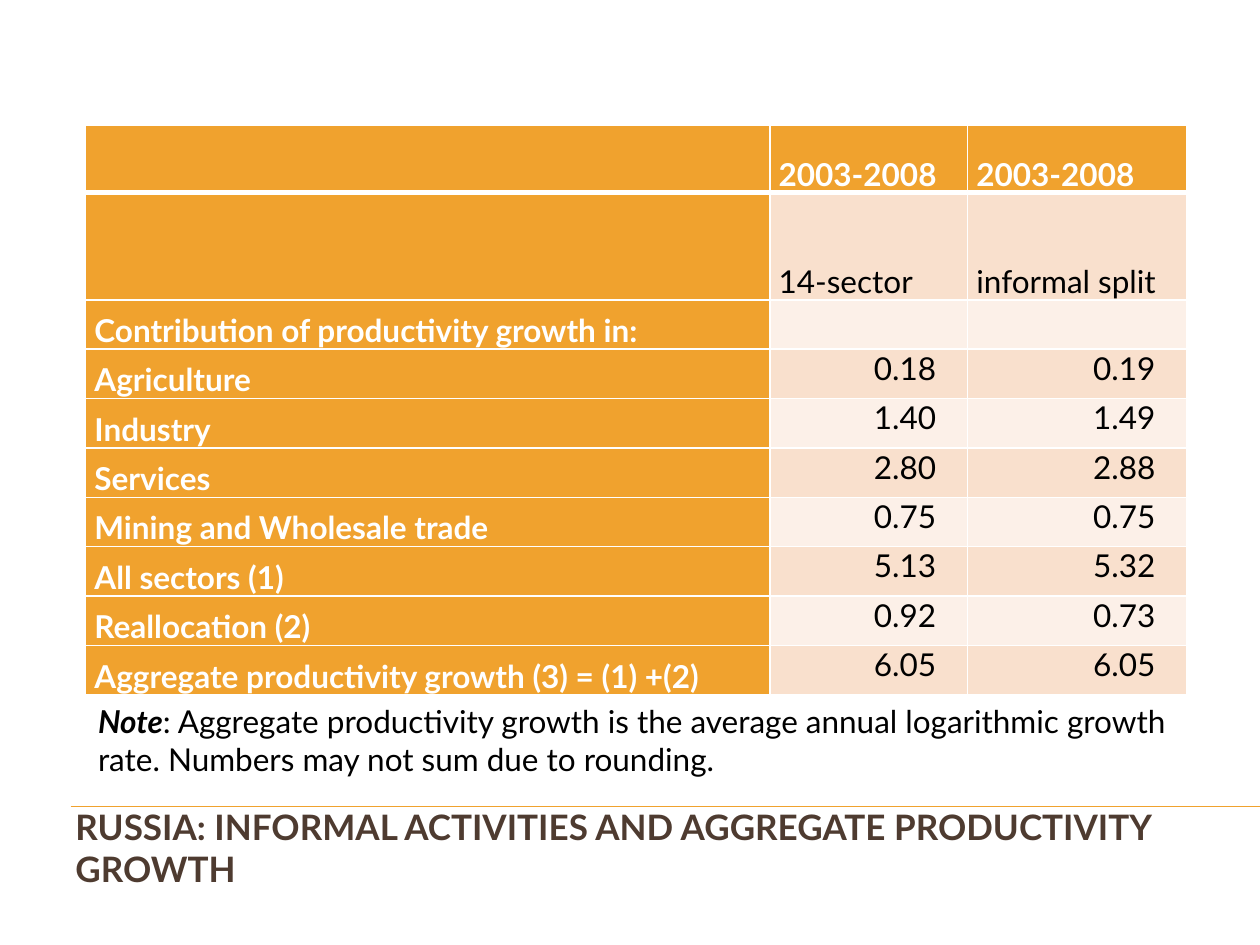
from dataclasses import dataclass

from lxml.etree import SubElement
from pptx import Presentation
from pptx.dml.color import RGBColor as RGB
from pptx.enum.shapes import MSO_CONNECTOR as Connector
from pptx.enum.text import MSO_ANCHOR as Anchor, PP_ALIGN as Align
from pptx.oxml.ns import qn
from pptx.util import Inches, Pt


@dataclass(frozen=True)
class Theme:
    font: str = "Lato"
    accent: str = "F0A22E"
    bands: tuple = ("F9E0CD", "FCF0E8")
    border: str = "FFFFFF"
    ink: str = "000000"
    heading: str = "4E3B30"
    body_size: int = 18
    title_size: int = 20
    thin: float = 1
    thick: float = 3
    rule: float = 0.75


THEME = Theme()
SLIDE_WIDTH, SLIDE_HEIGHT = Inches(10), Inches(7.5)
GRID_COLUMNS = 100
UNIT = SLIDE_WIDTH / GRID_COLUMNS

LEFT, WIDTH = 6.8, 87.4
COLUMN_WIDTHS = (54.3, 15.7, 17.4)
ROW_HEIGHTS = (5.4, 8.5) + (3.92,) * 8
SIDE_INSET, NUMBER_INSET = 0.7, 2.5

HEADING = "RUSSIA: INFORMAL ACTIVITIES AND AGGREGATE PRODUCTIVITY GROWTH"
NOTE = (": Aggregate productivity growth is the average annual logarithmic "
        "growth rate. Numbers may not sum due to rounding.")
GROWTH_ROWS = (
    ("", "2003-2008", "2003-2008"),
    ("", "14-sector", "informal split"),
    ("Contribution of productivity growth in:", "", ""),
    ("Agriculture", 0.18, 0.19),
    ("Industry", 1.40, 1.49),
    ("Services", 2.80, 2.88),
    ("Mining and Wholesale trade", 0.75, 0.75),
    ("All sectors (1)", 5.13, 5.32),
    ("Reallocation (2)", 0.92, 0.73),
    ("Aggregate productivity growth (3) = (1) +(2)", 6.05, 6.05),
)


def grid(units):
    """Turn grid units into a slide length; the cells are square."""
    return round(units * UNIT)


def style(paragraph, color, size=THEME.body_size, bold=None):
    font = paragraph.font
    font.name, font.size, font.bold = THEME.font, Pt(size), bold
    font.color.rgb = RGB.from_string(color)


def add_text_area(slide, left, top, width, height, anchor=Anchor.TOP):
    """Add a wrapping text box and return its frame."""
    frame = slide.shapes.add_textbox(*map(grid, (left, top, width, height))).text_frame
    frame.word_wrap = True
    frame.vertical_anchor = anchor
    return frame


def add_heading(slide):
    frame = add_text_area(slide, 5, 64.4, 92.5, 5.7, Anchor.MIDDLE)
    frame.text = HEADING
    style(frame.paragraphs[0], THEME.heading, THEME.title_size, bold=True)


def add_note(slide):
    paragraph = add_text_area(slide, LEFT, 55.2, WIDTH, 7.1).paragraphs[0]
    style(paragraph, THEME.ink)
    label = paragraph.add_run()
    label.text = "Note"
    label.font.bold = label.font.italic = True
    paragraph.add_run().text = NOTE


def add_rule(slide):
    rule = slide.shapes.add_connector(
        Connector.STRAIGHT, grid(5.6), grid(64), SLIDE_WIDTH, grid(64))
    rule.line.color.rgb = RGB.from_string(THEME.accent)
    rule.line.width = Pt(THEME.rule)
    SubElement(rule.element.spPr, qn("a:effectLst"))


def set_borders(cell, top, bottom):
    """Draw the four cell borders; they must precede the fill in the XML."""
    properties = cell._tc.get_or_add_tcPr()
    widths = {"L": THEME.thin, "R": THEME.thin, "T": top, "B": bottom}
    for side, width in widths.items():
        edge = SubElement(properties, qn(f"a:ln{side}"), w=str(Pt(width)))
        fill = SubElement(edge, qn("a:solidFill"))
        SubElement(fill, qn("a:srgbClr"), val=THEME.border)


def fill_cell(cell, value, row, column):
    is_header = row == 0 or column == 0
    is_number = isinstance(value, float)
    set_borders(cell,
                top=THEME.thick if row == 1 else THEME.thin,
                bottom=THEME.thick if row == 0 else THEME.thin)
    cell.fill.solid()
    cell.fill.fore_color.rgb = RGB.from_string(
        THEME.accent if is_header else THEME.bands[(row - 1) % 2])
    cell.margin_top = cell.margin_bottom = 0
    cell.margin_left = grid(SIDE_INSET)
    cell.margin_right = grid(NUMBER_INSET if is_number else SIDE_INSET)
    cell.vertical_anchor = Anchor.TOP if is_number else Anchor.BOTTOM
    cell.text = f"{value:.2f}" if is_number else value
    paragraph = cell.text_frame.paragraphs[0]
    paragraph.alignment = Align.RIGHT if is_number else Align.LEFT
    style(paragraph, THEME.border if is_header else THEME.ink, bold=is_header)


def add_growth_table(slide):
    table = slide.shapes.add_table(
        len(ROW_HEIGHTS), len(COLUMN_WIDTHS), grid(LEFT), grid(9.9),
        grid(WIDTH), grid(sum(ROW_HEIGHTS))).table
    table.first_col = True
    for column, width in zip(table.columns, COLUMN_WIDTHS):
        column.width = grid(width)
    for row, height in zip(table.rows, ROW_HEIGHTS):
        row.height = grid(height)
    for row, values in enumerate(GROWTH_ROWS):
        for column, value in enumerate(values):
            fill_cell(table.cell(row, column), value, row, column)


def main():
    deck = Presentation()
    deck.slide_width, deck.slide_height = SLIDE_WIDTH, SLIDE_HEIGHT
    slide = deck.slides.add_slide(deck.slide_layouts[6])
    add_rule(slide)
    add_heading(slide)
    add_note(slide)
    add_growth_table(slide)
    deck.save("out.pptx")


if __name__ == "__main__":
    main()
